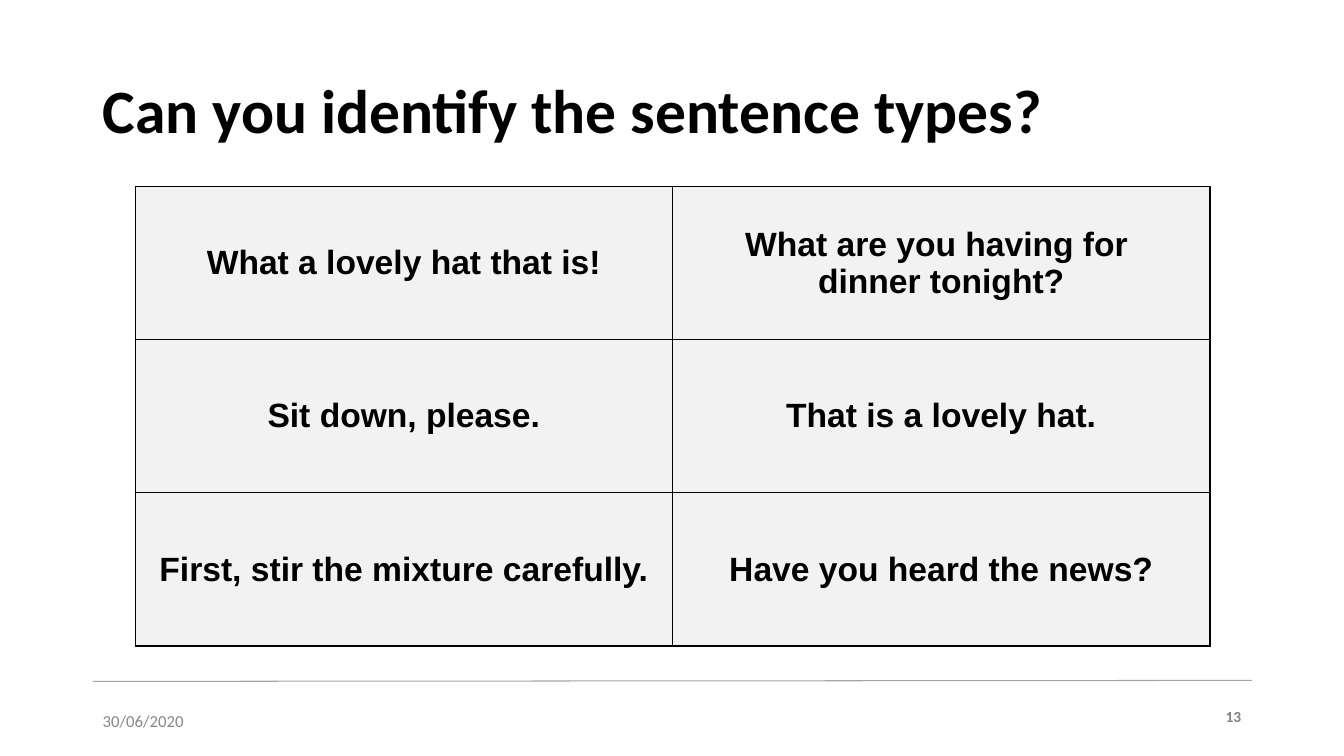
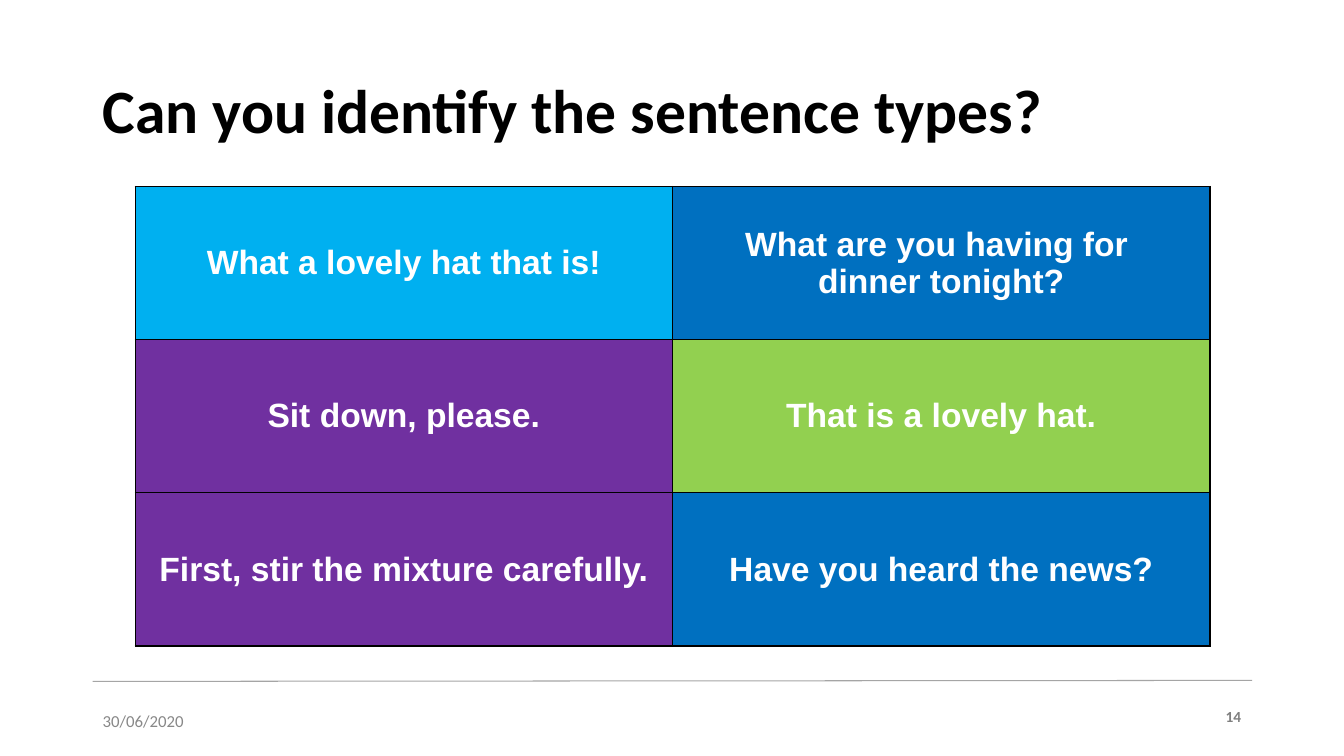
import pptx
import pptx.dml.color
import pptx.enum.shapes
import pptx.enum.text
import pptx.oxml
import pptx.oxml.ns
import pptx.util
from pptx.util import Inches

RGBColor = pptx.dml.color.RGBColor
Align = pptx.enum.text.PP_ALIGN
Anchor = pptx.enum.text.MSO_ANCHOR

BLACK = RGBColor(0x00, 0x00, 0x00)
WHITE = RGBColor(0xFF, 0xFF, 0xFF)
PALE_GREY = RGBColor(0xF2, 0xF2, 0xF2)
RULE_GREY = RGBColor(0xA5, 0xA5, 0xA5)
DATE_GREY = RGBColor(0x88, 0x88, 0x88)
NUMBER_GREY = RGBColor(0x7F, 0x7F, 0x7F)
EXCLAMATION = RGBColor(0x00, 0xB0, 0xF0)
QUESTION = RGBColor(0x00, 0x70, 0xC0)
COMMAND = RGBColor(0x70, 0x30, 0xA0)
STATEMENT = RGBColor(0x92, 0xD0, 0x50)

TITLE = "Can you identify the sentence types?"
DATE = "30/06/2020"
FIRST_NUMBER = 13
LEFT, CONTENT_WIDTH = 0.92, 11.5
COLUMN_WIDTH, ROW_HEIGHT = 5.33, 1.52

SENTENCES = [
    [("What a lovely hat that is!", EXCLAMATION),
     ("What are you having for \ndinner tonight?", QUESTION)],
    [("Sit down, please.", COMMAND),
     ("That is a lovely hat.", STATEMENT)],
    [("First, stir the mixture carefully.", COMMAND),
     ("Have you heard the news?", QUESTION)],
]


def write_text(frame, text, *, size, color, font="Calibri", bold=False,
               align=Align.LEFT, line_spacing=None):
    para = frame.paragraphs[0]
    para.alignment = align
    if line_spacing:
        para.line_spacing = line_spacing
    for index, line in enumerate(text.split("\n")):
        if index:
            para.add_line_break()
        span = para.add_run()
        span.text = line
        span.font.name = font
        span.font.size = pptx.util.Pt(size)
        span.font.bold = bold
        span.font.color.rgb = color


def add_text(page, text, left, top, width, height, anchor=Anchor.MIDDLE, **style):
    box = page.shapes.add_textbox(Inches(left), Inches(top), Inches(width), Inches(height))
    box.text_frame.word_wrap = True
    box.text_frame.vertical_anchor = anchor
    write_text(box.text_frame, text, **style)


def add_rule(page):
    rule = page.shapes.add_connector(
        pptx.enum.shapes.MSO_CONNECTOR.STRAIGHT,
        Inches(LEFT), Inches(6.76), Inches(LEFT + CONTENT_WIDTH), Inches(6.75))
    rule.line.color.rgb = RULE_GREY
    rule.line.width = pptx.util.Pt(0.75)
    properties = rule.element.find(pptx.oxml.ns.qn("p:spPr"))
    properties.append(pptx.oxml.parse_xml(
        f'<a:effectLst {pptx.oxml.ns.nsdecls("a")}/>'))


def add_frame(page, number):
    add_text(page, DATE, LEFT, 6.95, 3, 0.4, size=12, color=DATE_GREY)
    add_rule(page)
    add_text(page, str(number), 12.03, 6.97, 0.38, 0.29, anchor=Anchor.TOP,
             size=11, color=NUMBER_GREY, bold=True, align=Align.RIGHT)
    add_text(page, TITLE, LEFT, 0.4, CONTENT_WIDTH, 1.45,
             size=44, color=BLACK, bold=True, line_spacing=0.9)


def add_borders(cell):
    properties = cell._tc.get_or_add_tcPr()
    for side in ("lnL", "lnR", "lnT", "lnB"):
        properties.append(pptx.oxml.parse_xml(
            f'<a:{side} {pptx.oxml.ns.nsdecls("a")} w="{pptx.util.Pt(1)}">'
            f'<a:solidFill><a:srgbClr val="{BLACK}"/></a:solidFill></a:{side}>'))


def add_sentence_table(page, revealed):
    rows, columns = len(SENTENCES), len(SENTENCES[0])
    table = page.shapes.add_table(
        rows, columns, Inches(1.34), Inches(1.85),
        Inches(columns * COLUMN_WIDTH), Inches(rows * ROW_HEIGHT)).table
    table.first_row = False
    table.horz_banding = False
    for row, sentences in enumerate(SENTENCES):
        for column, (sentence, type_color) in enumerate(sentences):
            cell = table.cell(row, column)
            add_borders(cell)
            cell.fill.solid()
            cell.fill.fore_color.rgb = type_color if revealed else PALE_GREY
            cell.vertical_anchor = Anchor.MIDDLE
            write_text(cell.text_frame, sentence, size=24, font="Arial", bold=True,
                       color=WHITE if revealed else BLACK, align=Align.CENTER)


def main():
    deck = pptx.Presentation()
    deck.slide_width, deck.slide_height = Inches(13.33), Inches(7.5)
    for number, revealed in enumerate((False, True), FIRST_NUMBER):
        page = deck.slides.add_slide(deck.slide_layouts[6])
        add_frame(page, number)
        add_sentence_table(page, revealed)
    deck.save("out.pptx")


if __name__ == "__main__":
    main()
